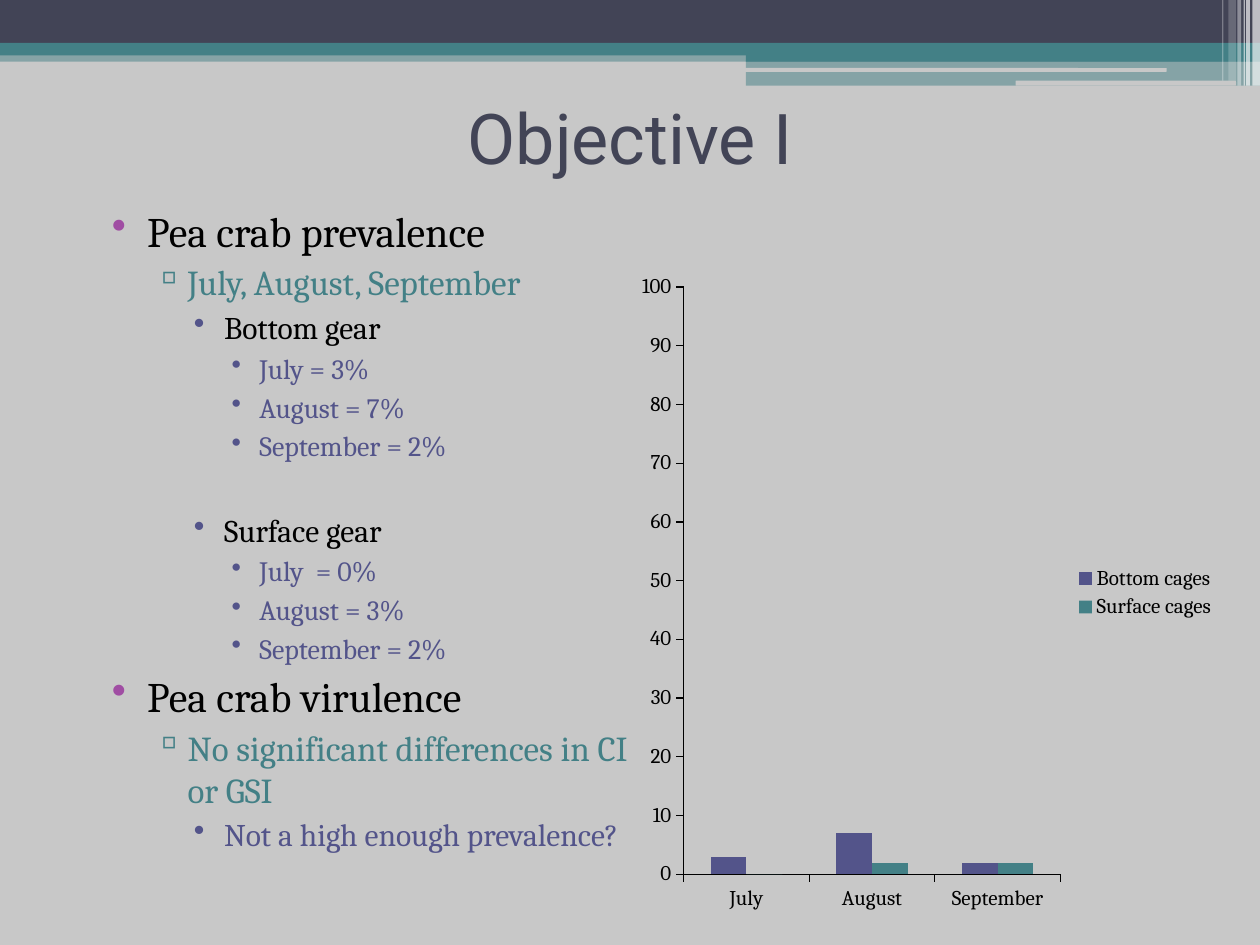
"""Builds the Objective I slide with pea crab findings and a prevalence chart."""
import pptx
import pptx.chart.data
import pptx.dml.color
import pptx.enum.chart
import pptx.enum.shapes
import pptx.enum.text
import pptx.oxml.ns
import pptx.util
from lxml import etree

Inches, Pt = pptx.util.Inches, pptx.util.Pt
RGBColor = pptx.dml.color.RGBColor
MSO_SHAPE = pptx.enum.shapes.MSO_SHAPE
qn = pptx.oxml.ns.qn

GREY = RGBColor(0xC8, 0xC8, 0xC8)
SLATE = RGBColor(0x42, 0x44, 0x56)
TEAL = RGBColor(0x43, 0x80, 0x86)
INDIGO = RGBColor(0x53, 0x54, 0x8A)
PURPLE = RGBColor(0xA0, 0x4D, 0xA3)
WHITE = RGBColor(0xFF, 0xFF, 0xFF)
BLACK = RGBColor(0, 0, 0)

BANDS = [
    (0, 0.4, 10, 0.09, TEAL, 50),
    (0, 0, 10, 0.34, SLATE, 100),
    (0, 0.34, 10, 0.1, TEAL, 100),
    (5.92, 0.39, 4.08, 0.1, TEAL, 100),
    (5.92, 0.48, 4.08, 0.2, TEAL, 50),
]
SLOTS = [(5.91, 0.54, 3.35, 0.03, GREY, 100), (8.06, 0.64, 1.75, 0.04, GREY, 100)]
STRIPES = [
    (9.94, 0, 0.06, 0.68, WHITE, 65),
    (9.89, 0, 0.03, 0.68, WHITE, 65),
    (9.87, 0, 0.01, 0.68, WHITE, 60),
    (9.82, 0, 0.03, 0.68, WHITE, 40),
    (9.75, 0, 0.06, 0.64, WHITE, 20),
    (9.7, 0, 0.01, 0.64, WHITE, 30),
]

TITLE = "Objective I"
LEVELS = [
    {"left": 0.4, "hang": 0.28, "size": 24, "bullet": "•", "mark": PURPLE},
    {"left": 0.72, "hang": 0.27, "size": 20, "bullet": "▫", "mark": TEAL},
    {"left": 1.01, "hang": 0.24, "size": 18, "bullet": "•", "mark": INDIGO},
    {"left": 1.29, "hang": 0.22, "size": 16, "bullet": "•", "mark": INDIGO},
]
GAP, GROUP_GAP = 3, 27.6
POINTS = [
    (0, "Pea crab prevalence", BLACK, GAP),
    (1, "July, August, September", TEAL, GAP),
    (2, "Bottom gear", BLACK, GAP),
    (3, "July = 3%", INDIGO, GAP),
    (3, "August = 7%", INDIGO, GAP),
    (3, "September = 2%", INDIGO, GAP),
    (2, "Surface gear", BLACK, GROUP_GAP),
    (3, "July  = 0%", INDIGO, GAP),
    (3, "August = 3%", INDIGO, GAP),
    (3, "September = 2%", INDIGO, GAP),
    (0, "Pea crab virulence", BLACK, GAP),
    (1, "No significant differences in CI or GSI", TEAL, GAP),
    (2, "Not a high enough prevalence?", INDIGO, GAP),
]
MONTHS = ["July", "August", "September"]
SERIES = [("Bottom cages", (3, 7, 2), INDIGO), ("Surface cages", (0, 2, 2), TEAL)]


def add_bar(s, kind, bar):
    *box, color, alpha = bar
    sp = s.shapes.add_shape(kind, *map(Inches, box))
    sp.shadow.inherit = False
    sp.fill.solid()
    sp.fill.fore_color.rgb = color
    sp.line.fill.background()
    if alpha < 100:
        clr = sp.fill._xPr.find(qn("a:solidFill"))[0]
        etree.SubElement(clr, qn("a:alpha"), val=str(alpha * 1000))


def add_text_frame(s, *box):
    tf = s.shapes.add_textbox(*map(Inches, box)).text_frame
    tf.word_wrap = True
    return tf


def add_run(p, text, font, size, color):
    r = p.add_run()
    r.text = text
    r.font.name, r.font.size = font, Pt(size)
    r.font.color.rgb = color


def set_bullet(p, level):
    pPr = p._p.get_or_add_pPr()
    pPr.set("marL", str(Inches(level["left"])))
    pPr.set("indent", str(-Inches(level["hang"])))
    clr = etree.SubElement(pPr, qn("a:buClr"))
    etree.SubElement(clr, qn("a:srgbClr"), val=str(level["mark"]))
    etree.SubElement(pPr, qn("a:buChar"), char=level["bullet"])


def add_points(s):
    tf = add_text_frame(s, 0.67, 1.58, 4.42, 5.58)
    for i, (depth, text, color, gap) in enumerate(POINTS):
        p = tf.add_paragraph() if i else tf.paragraphs[0]
        p.level = depth
        p.space_before = Pt(gap)
        set_bullet(p, LEVELS[depth])
        add_run(p, text, "Cambria", LEVELS[depth]["size"], color)


def add_prevalence_chart(s):
    data = pptx.chart.data.CategoryChartData()
    data.categories = MONTHS
    for name, values, _ in SERIES:
        data.add_series(name, values)
    chart = s.shapes.add_chart(
        pptx.enum.chart.XL_CHART_TYPE.COLUMN_CLUSTERED,
        Inches(5), Inches(2.08), Inches(4.75), Inches(5.25), data).chart
    chart.font.name, chart.font.size = "Cambria", Pt(12)
    chart.font.color.rgb = BLACK
    chart.has_title = False
    chart.has_legend = True
    chart.legend.position = pptx.enum.chart.XL_LEGEND_POSITION.RIGHT
    chart.legend.include_in_layout = False
    plot = chart.plots[0]
    plot.gap_width, plot.overlap = 150, 0
    plot.vary_by_categories = False
    for series, (_, _, color) in zip(plot.series, SERIES):
        series.format.fill.solid()
        series.format.fill.fore_color.rgb = color
    for axis in (chart.category_axis, chart.value_axis):
        axis.has_major_gridlines = False
        axis.major_tick_mark = pptx.enum.chart.XL_TICK_MARK.OUTSIDE
        axis.minor_tick_mark = pptx.enum.chart.XL_TICK_MARK.NONE
        axis.format.line.color.rgb = BLACK
        axis.format.line.width = Pt(0.75)
    axis = chart.value_axis
    axis.minimum_scale, axis.maximum_scale, axis.major_unit = 0, 100, 10


def main():
    prs = pptx.Presentation()
    prs.slide_width, prs.slide_height = Inches(10), Inches(7.5)
    s = prs.slides.add_slide(prs.slide_layouts[6])
    s.background.fill.solid()
    s.background.fill.fore_color.rgb = GREY
    for kind, bars in ((MSO_SHAPE.RECTANGLE, BANDS),
                       (MSO_SHAPE.ROUNDED_RECTANGLE, SLOTS),
                       (MSO_SHAPE.RECTANGLE, STRIPES)):
        for bar in bars:
            add_bar(s, kind, bar)
    tf = add_text_frame(s, 0.5, 0.5, 9, 1.17)
    tf.vertical_anchor = pptx.enum.text.MSO_ANCHOR.MIDDLE
    p = tf.paragraphs[0]
    p.alignment = pptx.enum.text.PP_ALIGN.CENTER
    add_run(p, TITLE, "Roboto", 40, SLATE)
    add_points(s)
    add_prevalence_chart(s)
    prs.save("out.pptx")


if __name__ == "__main__":
    main()
